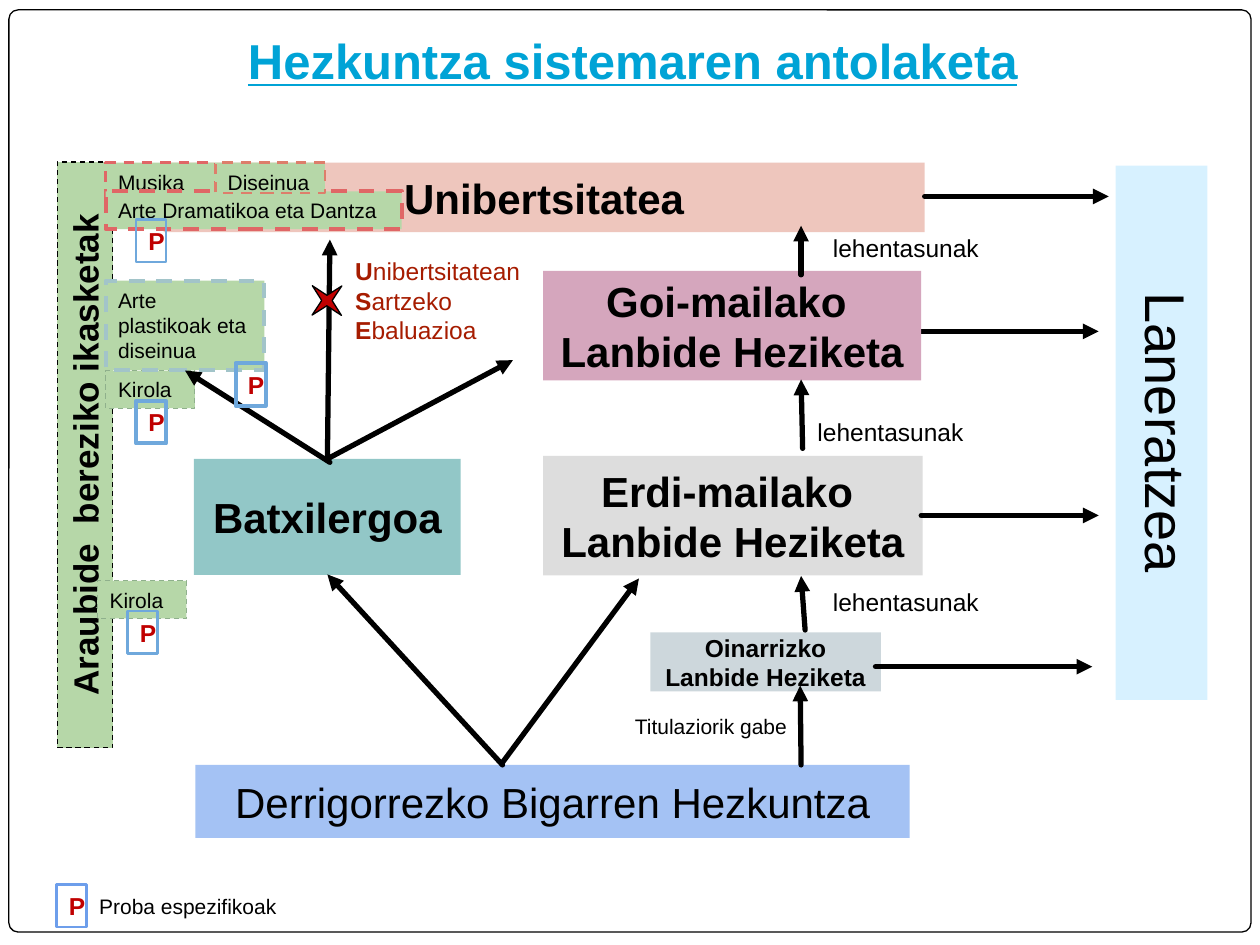
from lxml import etree
from pptx import Presentation
from pptx.dml.color import RGBColor
from pptx.enum import dml, shapes, text
from pptx.oxml.ns import qn
from pptx.util import Cm, Pt

HEX = {
    "black": "000000", "white": "FFFFFF", "cyan": "00A3D6", "rust": "A61C00",
    "red": "C00000", "salmon": "E4A394", "blue": "A4C2F4", "teal": "198989",
    "mauve": "D5A6BD", "gray": "DDDDDD", "slate": "C5D1D7", "sky": "66CCFF",
    "green": "B6D7A8", "rose": "E06666", "coral": "DD7E6B", "moss": "8FB08C",
    "mist": "A2C4C9", "edge": "6FA8DC", "key": "6D9EEB",
}
MID, TOP, LOW = (text.MSO_ANCHOR.MIDDLE, text.MSO_ANCHOR.TOP,
                 text.MSO_ANCHOR.BOTTOM)

# Stages: lines, place, size, bold, fill, opacity in percent
STAGES = [
    (["Unibertsitatea"], (3.3, 3.28, 15.34, 1.4), 24, True, "salmon", 61),
    (["Derrigorrezko Bigarren Hezkuntza"], (3.94, 15.42, 14.4, 1.47),
     24, False, "blue", 100),
    (["Batxilergoa"], (3.91, 9.25, 5.38, 2.34), 24, True, "teal", 47),
    (["Goi-mailako ", "Lanbide Heziketa"], (10.95, 5.46, 7.62, 2.21),
     24, True, "mauve", 100),
    (["Erdi-mailako ", "Lanbide Heziketa"], (10.95, 9.19, 7.65, 2.41),
     24, True, "gray", 100),
    (["Oinarrizko", "Lanbide Heziketa"], (13.11, 12.75, 4.65, 1.19),
     14, True, "slate", 86),
]

# Special studies: label, place, border colour, border width
STUDIES = [
    ("Musika", (2.13, 3.28, 2.21, 0.76), "rose", 1.5),
    ("Arte Dramatikoa eta Dantza", (2.13, 3.86, 5.97, 0.76), "rose", 2.25),
    ("Kirola", (2.13, 7.47, 1.8, 0.76), "moss", 0.75),
    ("Kirola", (1.96, 11.71, 1.8, 0.76), "moss", 0.75),
    ("Arte plastikoak eta diseinua", (2.13, 5.66, 3.2, 1.8), "mist", 2.25),
    ("Diseinua", (4.34, 3.28, 2.21, 0.61), "coral", 1.5),
]

# Entry test marks: left, top, border colour, border width
TESTS = [
    (2.74, 8.08, "edge", 2.25), (2.57, 12.32, "edge", 1.5),
    (1.14, 17.83, "key", 1.5), (2.74, 4.42, "edge", 1.5),
    (4.75, 7.32, "edge", 2.25),
]

# Plain labels: text, place, size, inset above and below
NOTES = [
    ("Titulaziorik gabe", (12.55, 14.25, 3.61, 0.76), 12, 0.13),
    ("Proba espezifikoak", (1.75, 17.88, 4.6, 0.76), 12, 0.13),
    ("lehentasunak", (16.54, 4.45, 4.22, 0.55), 14, 0.25),
    ("lehentasunak", (16.23, 8.15, 4.62, 0.55), 14, 0.25),
    ("lehentasunak", (16.54, 11.76, 5.03, 0.33), 14, 0.25),
]
EXAM = ["Unibertsitatean", "Sartzeko", "Ebaluazioa"]

# Arrows: from x, y to x, y
BEHIND = [(6.6, 9.25, 6.65, 4.83), (17.55, 6.68, 22.15, 6.68)]
FRONT = [
    (10.13, 15.42, 6.6, 11.58), (10.13, 15.37, 12.88, 11.66),
    (16.15, 15.42, 16.13, 13.82), (16.23, 12.7, 16.15, 11.61),
    (16.18, 9.04, 16.15, 7.65), (16.15, 5.54, 16.15, 4.55),
    (6.6, 9.25, 10.34, 7.26), (6.65, 9.32, 3.73, 7.47),
    (18.64, 3.96, 22.35, 3.96), (18.57, 10.39, 22.15, 10.39),
    (17.65, 13.44, 22.02, 13.44),
]

deck = Presentation()
deck.slide_width, deck.slide_height = Cm(25.4), Cm(19.05)
slide = deck.slides.add_slide(deck.slide_layouts[6])


def tint(name):
    return RGBColor.from_string(HEX[name])


def write(box, rows, size, color="black", bold=False, line=False,
          center=False, anchor=TOP, pad=0.13):
    """Each row is a list of (words, bold) runs or one string."""
    frame = box.text_frame
    frame.word_wrap = True
    frame.vertical_anchor = anchor
    frame.margin_left = frame.margin_right = Cm(0.25)
    frame.margin_top = frame.margin_bottom = Cm(pad)
    for i, row in enumerate(rows):
        para = frame.add_paragraph() if i else frame.paragraphs[0]
        para.alignment = (text.PP_ALIGN.CENTER if center
                          else text.PP_ALIGN.LEFT)
        for words, heavy in [(row, bold)] if isinstance(row, str) else row:
            run = para.add_run()
            run.text = words
            font = run.font
            font.name, font.size, font.bold = "Arial", Pt(size), heavy
            font.color.rgb = tint(color)
            if line:
                font.underline = True


def block(place, fill=None, edge=None, width=0.75, dash=False, alpha=100,
          kind=shapes.MSO_SHAPE.RECTANGLE, turn=0):
    box = slide.shapes.add_shape(kind, *map(Cm, place))
    box.shadow.inherit = False
    box.rotation = turn
    if fill:
        box.fill.solid()
        box.fill.fore_color.rgb = tint(fill)
        if alpha < 100:
            color = box.fill._xPr.find(".//" + qn("a:srgbClr"))
            etree.SubElement(color, qn("a:alpha"), val=str(alpha * 1000))
    else:
        box.fill.background()
    if edge:
        box.line.color.rgb = tint(edge)
        box.line.width = Pt(width)
        if dash:
            box.line.dash_style = dml.MSO_LINE.DASH
    else:
        box.line.fill.background()
    return box


def label(place):
    return slide.shapes.add_textbox(*map(Cm, place))


def arrow(ends):
    link = slide.shapes.add_connector(shapes.MSO_CONNECTOR.STRAIGHT,
                                      *map(Cm, ends))
    link.line.color.rgb = tint("black")
    link.line.width = Pt(3)
    pen = link.line._get_or_add_ln()
    pen.set("cap", "rnd")
    etree.SubElement(pen, qn("a:tailEnd"), type="triangle")
    etree.SubElement(link._element.spPr, qn("a:effectLst"))


# Frame and title
frame = block((0.18, 0.2, 25.04, 18.59), "white", "black",
              kind=shapes.MSO_SHAPE.ROUNDED_RECTANGLE)
frame.adjustments[0] = 0.01
write(label((4.75, 0.36, 18.44, 1.7)), ["Hezkuntza sistemaren antolaketa"],
      28, "cyan", bold=True, line=True, anchor=LOW, pad=0.25)

# Stages and side bars
for ends in BEHIND:
    arrow(ends)
for rows, place, size, bold, fill, alpha in STAGES:
    write(block(place, fill, alpha=alpha), rows, size, bold=bold,
          center=True, anchor=MID)
write(block((18.03, 7.8, 10.77, 1.85), "sky", alpha=26, turn=90),
      ["Laneratzea"], 32, center=True)
write(block((-4.19, 8.61, 11.81, 1.12), "green", "black", dash=True,
            turn=270),
      ["Araubide  bereziko ikasketak"], 20, bold=True, center=True)

# Special studies
for name, place, edge, width in STUDIES:
    write(block(place, "green", edge, width, dash=True), [name], 12)

# Arrows and the exam star
for ends in FRONT:
    arrow(ends)
star = block((6.17, 5.64, 0.84, 0.84), "red", "black",
             kind=shapes.MSO_SHAPE.STAR_4_POINT, turn=45.5)
star.adjustments[0] = 0.125

# Test marks and labels
for left, top, edge, width in TESTS:
    write(block((left, top, 0.61, 0.86), edge=edge, width=width),
          ["P"], 14, "red", bold=True)
for words, place, size, pad in NOTES:
    write(label(place), [words], size, pad=pad)
write(label((6.91, 5.21, 4.22, 1.7)),
      [[(word[0], True), (word[1:], False)] for word in EXAM],
      14, "rust", anchor=MID)

deck.save("out.pptx")
